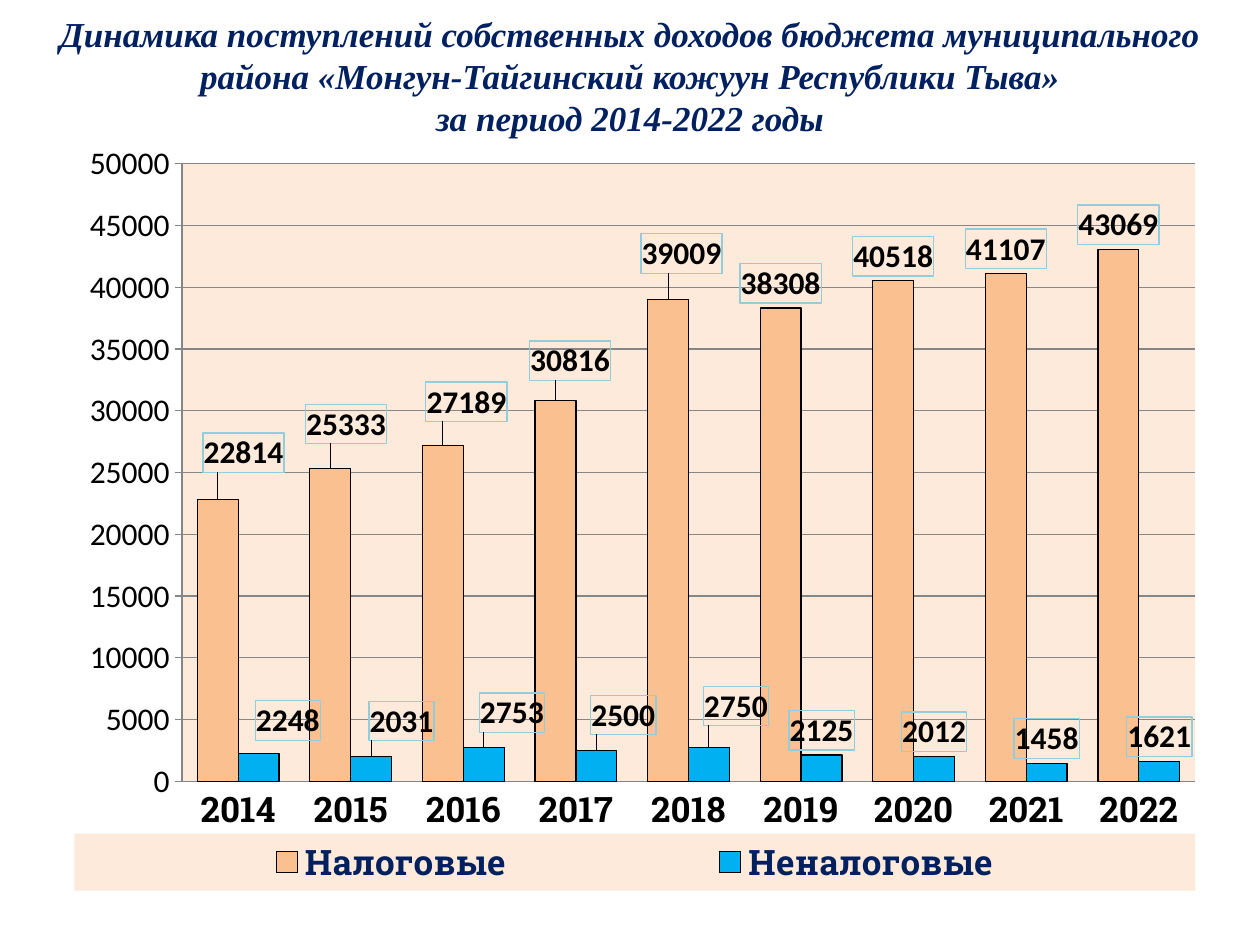
from dataclasses import dataclass

from lxml import etree
from pptx import Presentation
from pptx.chart.data import CategoryChartData
from pptx.dml.color import RGBColor
from pptx.enum.chart import XL_CHART_TYPE, XL_LABEL_POSITION, XL_LEGEND_POSITION, XL_TICK_MARK
from pptx.enum.text import MSO_ANCHOR, MSO_AUTO_SIZE, PP_ALIGN
from pptx.oxml import parse_xml
from pptx.oxml.ns import nsdecls
from pptx.util import Inches, Pt

COLUMNS = XL_CHART_TYPE.COLUMN_CLUSTERED
OUTSIDE_END = XL_LABEL_POSITION.OUTSIDE_END
BOTTOM = XL_LEGEND_POSITION.BOTTOM
TICK_NONE = XL_TICK_MARK.NONE
TICK_OUTSIDE = XL_TICK_MARK.OUTSIDE
TOP = MSO_ANCHOR.TOP
NO_AUTOFIT = MSO_AUTO_SIZE.NONE
CENTER = PP_ALIGN.CENTER

NAVY, BLACK, GREY = "002060", "000000", "868686"
PEACH, LABEL_BORDER = "FDEADA", "92CDDC"
TITLE_FORMAT = {"name": "Times New Roman", "size": Pt(20), "bold": True, "italic": True}
CHART_FORMAT = {"name": "Calibri", "size": Pt(18), "bold": False}
VALUE_FORMAT = {"name": "Calibri", "size": Pt(18), "bold": True}
SLAB_FORMAT = {"name": "Roboto Slab", "size": Pt(20), "bold": True}


@dataclass
class Revenue:
    name: str
    color: str
    amounts: list[int]
    label_shifts: list[tuple[float, float]]


YEARS = [str(year) for year in range(2014, 2023)]
REVENUES = [
    Revenue("Налоговые", "FAC090",
            [22814, 25333, 27189, 30816, 39009, 38308, 40518, 41107, 43069],
            [(2.3, -2.9), (1.4, -2.6), (2.1, -2.5), (1.3, -2), (1.2, -2.8)]),
    Revenue("Неналоговые", "00B0F0",
            [2248, 2031, 2753, 2500, 2750, 2125, 2012, 1458, 1621],
            [(2.6, -1.1), (2.7, -1.4), (2.5, -1.3), (2.4, -1.4), (2.4, -2.2)]),
]


def rgb(color: str) -> RGBColor:
    return RGBColor.from_string(color)


def apply_font(font, values: dict, color: str) -> None:
    for attribute, value in values.items():
        setattr(font, attribute, value)
    font.color.rgb = rgb(color)


def manual_layout(**settings):
    layout = parse_xml(f"<c:layout {nsdecls('c')}><c:manualLayout/></c:layout>")
    for tag, value in settings.items():
        etree.SubElement(layout[0], f"{{{layout.nsmap['c']}}}{tag}").set("val", str(value))
    return layout


def solid_fill(color: str) -> str:
    return f'<a:solidFill><a:srgbClr val="{color}"/></a:solidFill>'


def area_format(content: str):
    return parse_xml(f"<c:spPr {nsdecls('c', 'a')}>{content}</c:spPr>")


def add_title(slide, lines: list[str]) -> None:
    title = slide.shapes.title
    title.left, title.top, title.width, title.height = (
        Inches(0), Inches(0.05), Inches(10), Inches(1.14))
    frame = title.text_frame
    frame.text = "\n".join(lines)
    frame.word_wrap = True
    frame.auto_size = NO_AUTOFIT
    frame.vertical_anchor = TOP
    for paragraph in frame.paragraphs:
        paragraph.alignment = CENTER
        for run in paragraph.runs:
            apply_font(run.font, TITLE_FORMAT, NAVY)


def format_series(series, revenue: Revenue) -> None:
    series.format.fill.solid()
    series.format.fill.fore_color.rgb = rgb(revenue.color)
    series.format.line.color.rgb = rgb(BLACK)
    series.format.line.width = Pt(0.75)
    series.data_labels.show_value = True
    series.data_labels.position = OUTSIDE_END
    apply_font(series.data_labels.font, VALUE_FORMAT, BLACK)
    for index in range(len(revenue.label_shifts)):
        label = series.points[index].data_label
        label.position = OUTSIDE_END
        apply_font(label.font, VALUE_FORMAT, BLACK)


def format_axes(chart) -> None:
    years, amounts = chart.category_axis, chart.value_axis
    years.major_tick_mark = TICK_NONE
    apply_font(years.tick_labels.font, SLAB_FORMAT, BLACK)
    amounts.minimum_scale, amounts.maximum_scale, amounts.major_unit = 0, 50000, 5000
    amounts.major_tick_mark = TICK_OUTSIDE
    amounts.has_major_gridlines = True
    for line in (years.format.line, amounts.format.line, amounts.major_gridlines.format.line):
        line.color.rgb = rgb(GREY)
        line.width = Pt(0.75)


def place_chart_parts(chart) -> None:
    root = chart.element
    plot_area = root.xpath(".//c:plotArea")[0]
    for layout in plot_area.xpath("./c:layout") + root.xpath(".//c:legend/c:layout"):
        layout.getparent().remove(layout)
    plot_area.insert(0, manual_layout(layoutTarget="inner", xMode="edge", yMode="edge",
                                      x=0.096, y=0.038, w=0.904, h=0.813))
    plot_area.append(area_format(solid_fill(PEACH)))
    root.xpath(".//c:legend/c:legendPos")[0].addnext(
        manual_layout(xMode="edge", yMode="edge", x=0, y=0.92, w=1, h=0.075))
    root.xpath(".//c:legend/c:txPr")[0].addprevious(area_format(solid_fill(PEACH)))
    border = f'<a:noFill/><a:ln w="9525">{solid_fill(LABEL_BORDER)}</a:ln>'
    for text in root.xpath(".//c:dLbls/c:txPr | .//c:dLbl/c:txPr"):
        text.addprevious(area_format(border))
    shifts = [shift for revenue in REVENUES for shift in revenue.label_shifts]
    for index, (x, y) in zip(root.xpath(".//c:dLbl/c:idx"), shifts):
        index.addnext(manual_layout(x=round(x / 100, 3), y=round(y / 100, 3)))


def add_revenue_chart(slide) -> None:
    data = CategoryChartData()
    data.categories = YEARS
    for revenue in REVENUES:
        data.add_series(revenue.name, revenue.amounts)
    chart = slide.shapes.add_chart(
        COLUMNS, Inches(0.59), Inches(1.07), Inches(8.9), Inches(6.03), data).chart
    apply_font(chart.font, CHART_FORMAT, BLACK)
    chart.has_title = False
    chart.has_legend = True
    chart.legend.position = BOTTOM
    chart.legend.include_in_layout = False
    apply_font(chart.legend.font, SLAB_FORMAT, NAVY)
    columns = chart.plots[0]
    columns.gap_width = 75
    columns.overlap = 0
    columns.vary_by_categories = False
    for series, revenue in zip(columns.series, REVENUES):
        format_series(series, revenue)
    format_axes(chart)
    place_chart_parts(chart)


def main() -> None:
    presentation = Presentation()
    presentation.slide_width, presentation.slide_height = Inches(10), Inches(7.5)
    slide = presentation.slides.add_slide(presentation.slide_layouts[5])
    add_title(slide, [
        "Динамика поступлений собственных доходов бюджета муниципального "
        "района «Монгун-Тайгинский кожуун Республики Тыва»",
        "за период 2014-2022 годы",
    ])
    add_revenue_chart(slide)
    presentation.save("out.pptx")


if __name__ == "__main__":
    main()
